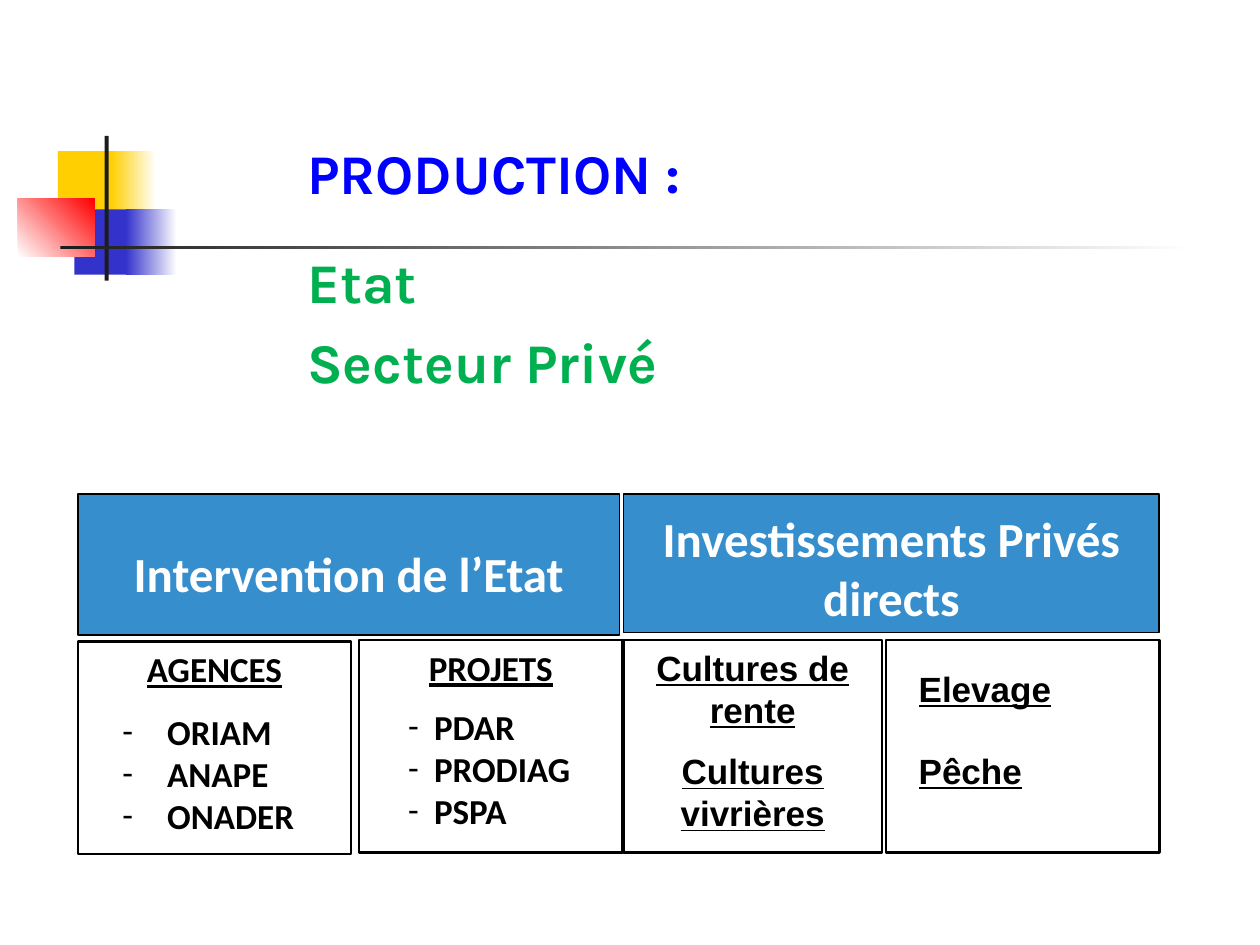
from dataclasses import dataclass

from lxml import etree
from pptx import Presentation
from pptx import util as u
from pptx.dml.color import RGBColor
from pptx.enum import shapes, text
from pptx.oxml import ns

Cm, Pt = u.Cm, u.Pt
LEFT, MID = text.PP_ALIGN.LEFT, text.PP_ALIGN.CENTER


@dataclass(frozen=True)
class Theme:
    white: str = "FFFFFF"
    black: str = "000000"
    ink: str = "1C1C1C"
    gold: str = "FFCF01"
    navy: str = "3333CC"
    red: str = "FF0000"
    blue: str = "0000FF"
    green: str = "00B050"
    band: str = "0070C0"
    title: int = 32
    head: int = 28
    body: int = 20


T = Theme()


def rgb(code):
    return RGBColor.from_string(code)


def add(node, tag, **attrs):
    """Append a drawing element with its attributes."""
    return etree.SubElement(node, ns.qn(tag), attrs)


def write(frame, line, size=T.body, font="Calibri", color=T.black,
          line_under=False, align=LEFT, before=0, indent=0, hang=0):
    """Add one bold paragraph; a hang gives it a dash bullet."""
    para = frame.paragraphs[0]
    if para.runs:
        para = frame.add_paragraph()
    para.alignment, para.space_before = align, Pt(before)
    run = para.add_run()
    run.text = line
    face = run.font
    face.name, face.size, face.bold = font, Pt(size), True
    face.underline = line_under
    face.color.rgb = rgb(color)
    if hang:
        props = para._p.get_or_add_pPr()
        props.set("marL", str(Cm(indent)))
        props.set("indent", str(-Cm(hang)))
        add(props, "a:buFont", typeface=font)
        add(props, "a:buChar", char="-")


def rect(slide, x, y, w, h):
    item = slide.shapes.add_shape(
        shapes.MSO_SHAPE.RECTANGLE, Cm(x), Cm(y), Cm(w), Cm(h))
    item.shadow.inherit = False
    return item


def paint(slide, place, start, end=None, angle=0):
    """Draw an unlined block, plain or fading from start to end."""
    item = rect(slide, *place)
    item.line.fill.background()
    if end is None:
        item.fill.solid()
        item.fill.fore_color.rgb = rgb(start)
        return
    item.fill.gradient()
    item.fill.gradient_angle = angle
    for stop, code in zip(item.fill.gradient_stops, (start, end)):
        stop.color.rgb = rgb(code)


def box(slide, place, fill, alpha, width, top=0.13, left=0.25):
    """Draw an outlined, see-through box and return its text frame."""
    item = rect(slide, *place)
    item.fill.solid()
    item.fill.fore_color.rgb = rgb(fill)
    tint = item.fill._xPr.find(".//" + ns.qn("a:srgbClr"))
    add(tint, "a:alpha", val=str(alpha * 1000))
    item.line.color.rgb = rgb(T.black)
    item.line.width = Pt(width)
    frame = item.text_frame
    frame.word_wrap = True
    frame.vertical_anchor = text.MSO_ANCHOR.TOP
    frame.margin_top, frame.margin_left = Cm(top), Cm(left)
    return frame


def motif(slide):
    paint(slide, (1.17, 3.05, 1.22, 1.32), T.gold)
    paint(slide, (2.24, 3.05, 0.91, 1.32), T.gold, T.white)
    paint(slide, (1.5, 4.22, 1.17, 1.32), T.navy)
    paint(slide, (2.54, 4.22, 1.02, 1.32), T.navy, T.white)
    paint(slide, (0.36, 4.01, 1.55, 1.17), T.white, T.red, 45)
    paint(slide, (2.11, 2.74, 0.08, 2.92), T.ink)
    paint(slide, (1.22, 4.95, 22.86, 0.08), T.ink, T.white)


def heading(slide):
    item = slide.shapes.title
    item.left, item.top = Cm(5.94), Cm(2.67)
    item.width, item.height = Cm(13.69), Cm(5.86)
    frame = item.text_frame
    frame.word_wrap = True
    frame.auto_size = text.MSO_AUTO_SIZE.NONE
    frame.vertical_anchor = text.MSO_ANCHOR.TOP
    for line, color, gap in (("PRODUCTION :", T.blue, 0),
                             ("Etat", T.green, 24),
                             ("Secteur Privé", T.green, 7)):
        write(frame, line, size=T.title, font="Karla", color=color,
              before=gap)


def header(slide, place, line, top):
    frame = box(slide, place, T.band, 79, 1, top=top)
    write(frame, line, size=T.head, color=T.white, align=MID)


def listing(slide, place, name, items, gap, indent, hang):
    """Draw a box with a centred name over a dashed list."""
    frame = box(slide, place, T.white, 50, 1.5)
    write(frame, name, line_under=True, align=MID)
    for n, line in enumerate(items):
        write(frame, line, before=0 if n else gap,
              indent=indent, hang=hang)


def topics(slide, place, lines, gap, align=LEFT, **inset):
    """Draw a box with underlined topics set apart by a gap."""
    frame = box(slide, place, T.white, 50, 1.5, **inset)
    for n, line in enumerate(lines):
        write(frame, line, font="Arial", line_under=True, align=align,
              before=gap if n else 0)


def main():
    deck = Presentation()
    deck.slide_width, deck.slide_height = Cm(25.4), Cm(19.05)
    slide = deck.slides.add_slide(deck.slide_layouts[5])

    # Corner motif and heading
    motif(slide)
    heading(slide)

    # Detail boxes
    top, high = 12.9, 4.29
    topics(slide, (17.86, top, 5.51, high), ("Elevage", "Pêche"), 23,
           top=0.55, left=0.66)
    topics(slide, (12.57, top, 5.21, high),
           ("Cultures de rente", "Cultures vivrières"), 11, MID)
    listing(slide, (7.24, top, 5.31, high), "PROJETS",
            ("PDAR", "PRODIAG", "PSPA"), 10, 1.26, 0.52)
    listing(slide, (1.57, top + 0.03, 5.51, high), "AGENCES",
            ("ORIAM", "ANAPE", "ONADER"), 12, 1.55, 0.9)

    # Column headers
    header(slide, (1.57, 9.96, 10.92, 2.84), "Intervention de l’Etat", 1)
    header(slide, (12.57, 9.96, 10.8, 2.79),
           "Investissements Privés directs", 0.3)

    deck.save("out.pptx")


if __name__ == "__main__":
    main()
